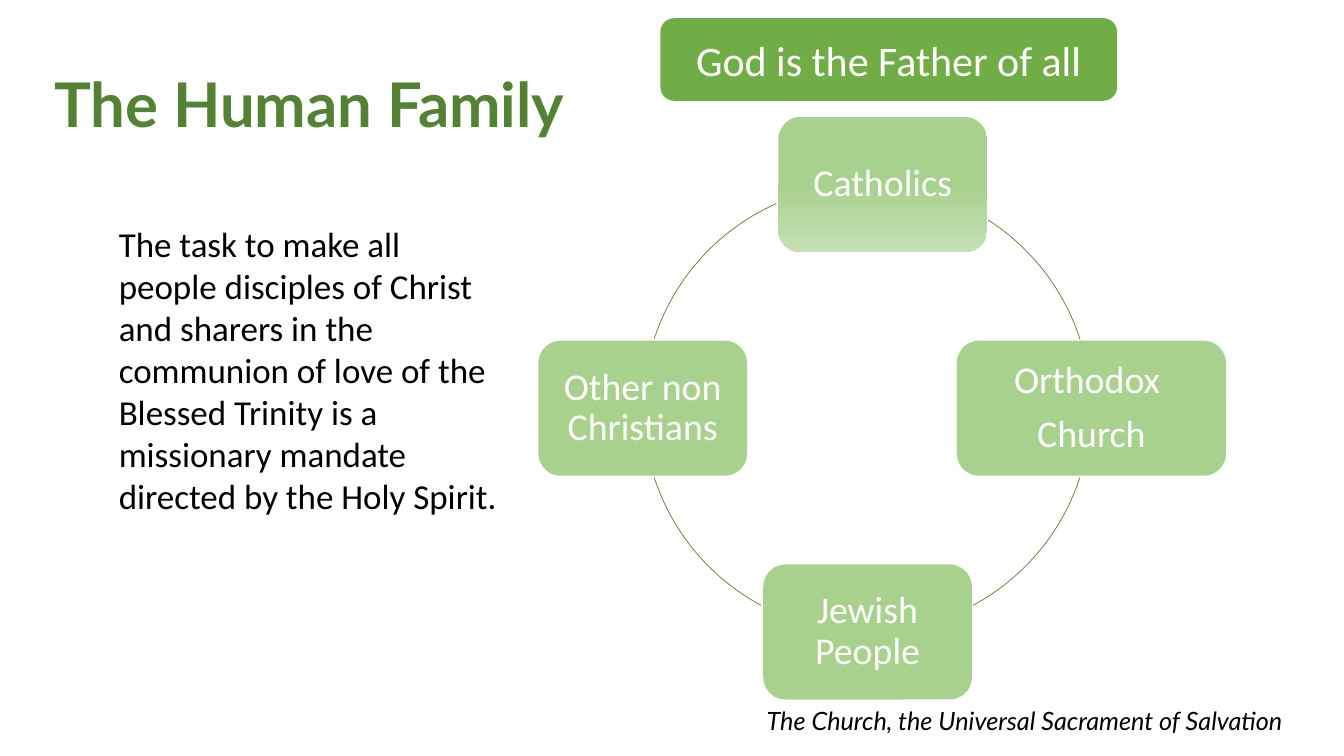
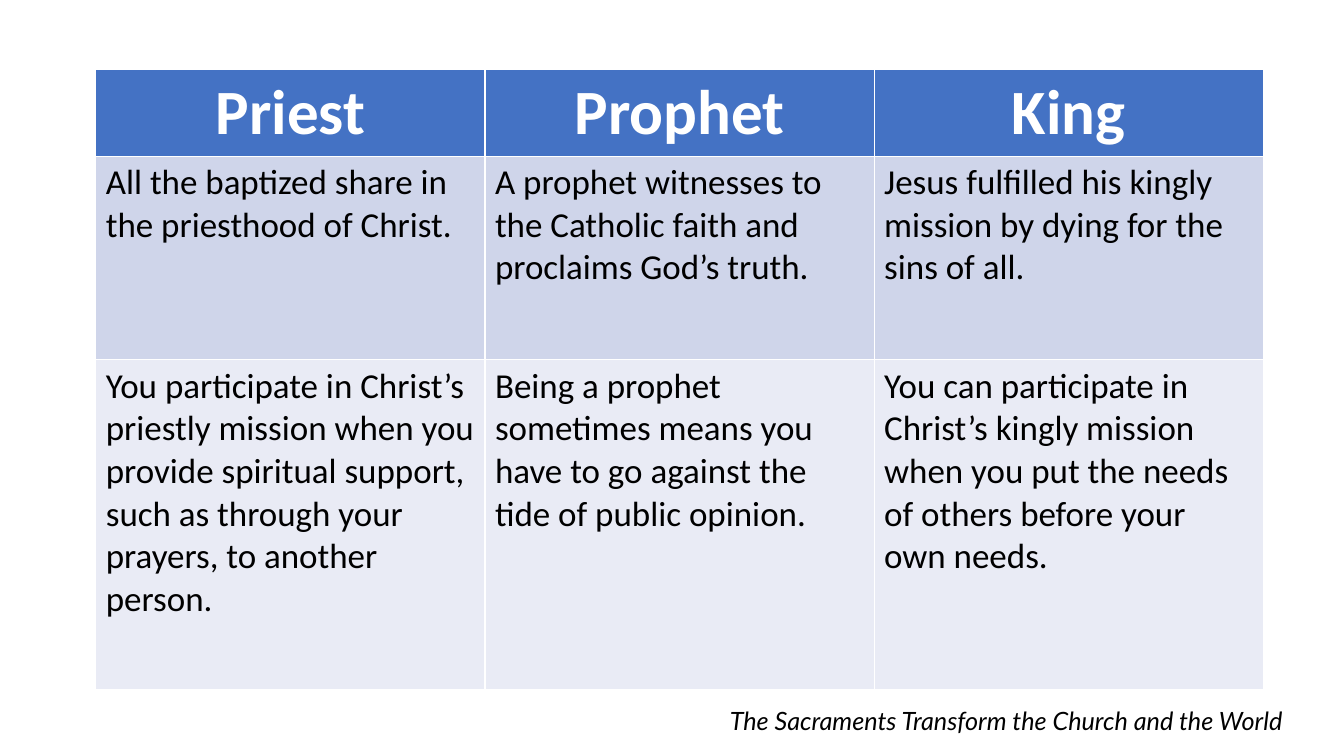
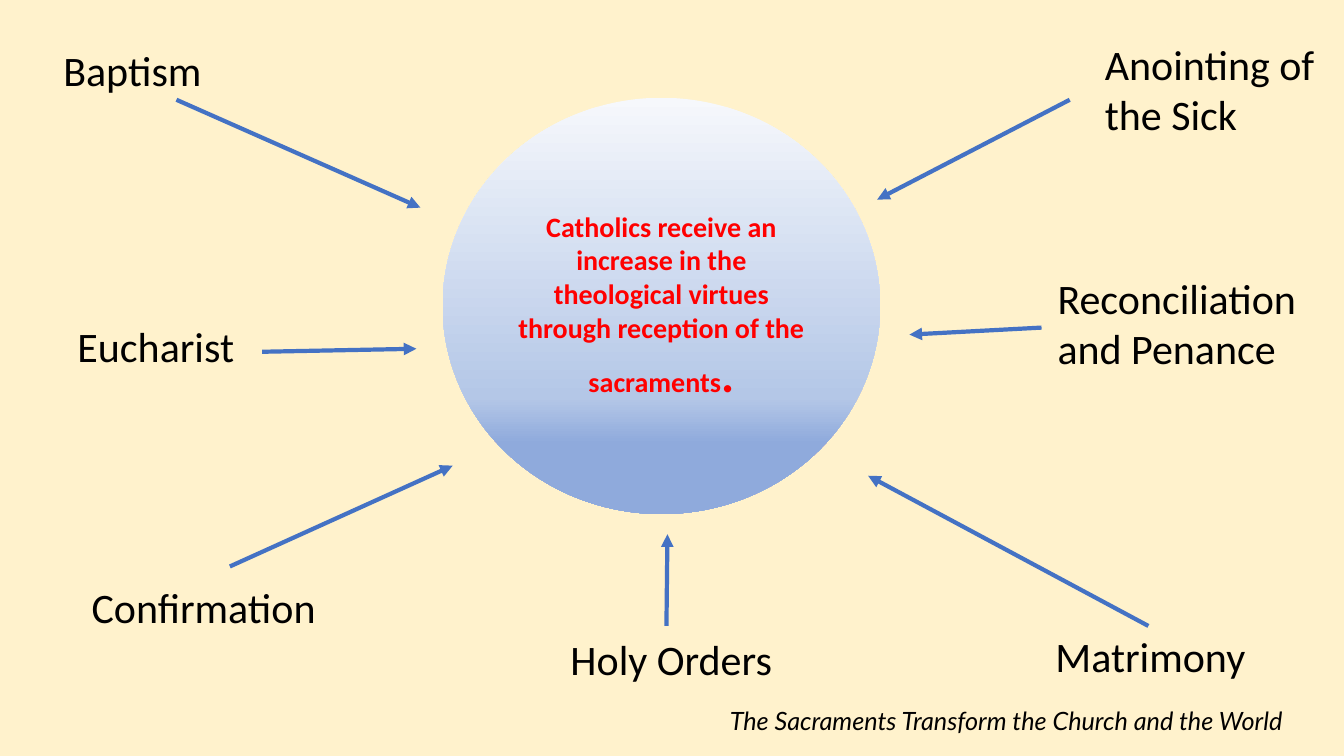
"""Build three slides on the human family, the offices of Christ and the sacraments."""
import lxml.etree
import pptx
import pptx.dml.color
import pptx.enum.shapes
import pptx.enum.text
import pptx.oxml.ns
import pptx.util

RGB = pptx.dml.color.RGBColor
SHAPE = pptx.enum.shapes.MSO_SHAPE
ALIGN = pptx.enum.text.PP_ALIGN
ANCHOR = pptx.enum.text.MSO_ANCHOR
Pt = pptx.util.Pt
qn = pptx.oxml.ns.qn

WHITE = RGB(0xFF, 0xFF, 0xFF)
BLACK = RGB(0, 0, 0)
RED = RGB(0xFF, 0, 0)
CREAM = RGB(0xFF, 0xF2, 0xCC)
GREEN = RGB(0x70, 0xAD, 0x47)
DARK_GREEN = RGB(0x54, 0x82, 0x35)
LIGHT_GREEN = RGB(0xA9, 0xD1, 0x8E)
PALE_GREEN = RGB(0xC5, 0xE0, 0xB4)
BLUE = RGB(0x44, 0x72, 0xC4)
MID_BLUE = RGB(0x8F, 0xAA, 0xDC)
LIGHT_BLUE = RGB(0xB4, 0xC7, 0xE7)
PALE_BLUE = RGB(0xF6, 0xF8, 0xFC)
BAND_DARK = RGB(0xCF, 0xD5, 0xEA)
BAND_LIGHT = RGB(0xE9, 0xEB, 0xF5)

PX_PER_INCH = 100
TITLE = "The Human Family"
TASK = ("The task to make all people disciples of Christ and sharers in the communion of love "
        "of the Blessed Trinity is a missionary mandate directed by the Holy Spirit.")
BANNER = "God is the Father of all"
CHURCH_FOOTER = "The Church, the Universal Sacrament of Salvation"
SACRAMENTS_FOOTER = "The Sacraments Transform the Church and the World"

NODE_W, NODE_H = 207, 134
NODES = [
    ("Catholics", 772, 116, NODE_W),
    ("Orthodox \nChurch", 949, 338, 267),
    ("Jewish People", 757, 560, NODE_W),
    ("Other non Christians", 534, 338, NODE_W),
]
CATHOLIC_STOPS = [(0, LIGHT_GREEN), (50, LIGHT_GREEN), (100, PALE_GREEN)]
RING = (638, 183, 444, 444)
ARC_DEGREES = [(302.7, 342.1), (18.1, 61.8), (118.2, 161.9), (198.1, 246.1)]

OFFICES = [
    ["Priest", "Prophet", "King"],
    ["All the baptized share in the priesthood of Christ.",
     "A prophet witnesses to the Catholic faith and proclaims God’s truth.",
     "Jesus fulfilled his kingly mission by dying for the sins of all."],
    ["You participate in Christ’s priestly mission when you provide spiritual support, "
     "such as through your prayers, to another person.",
     "Being a prophet sometimes means you have to go against the tide of public opinion.",
     "You can participate in Christ’s kingly mission when you put the needs of others "
     "before your own needs."],
]
ROW_HEIGHTS = [86, 202, 327]
ROW_FILLS = [BLUE, BAND_DARK, BAND_LIGHT]

VIRTUES = "Catholics receive an increase in the theological virtues through reception of the sacraments"
SUN_STOPS = [(0, PALE_BLUE), (72, LIGHT_BLUE), (83, MID_BLUE), (100, MID_BLUE)]
SACRAMENTS = [
    ("Baptism", (53, 39, 350, 60), (175, 99, 417, 206)),
    ("Eucharist", (67, 313, 350, 60), (260, 349, 413, 346)),
    ("Confirmation", (81, 572, 350, 60), (228, 562, 449, 462)),
    ("Holy Orders", (556, 624, 393, 60), (661, 621, 662, 530)),
    ("Anointing of the Sick", (1086, 33, 245, 110), (1061, 99, 870, 198)),
    ("Reconciliation and Penance", (1039, 265, 282, 110), (1033, 325, 902, 332)),
    ("Matrimony", (1037, 621, 280, 60), (1139, 621, 861, 472)),
]


def px(*lengths):
    """Turn px lengths into EMU."""
    return [pptx.util.Emu(n * 914400 // PX_PER_INCH) for n in lengths]


def format_text(tf, size, color, font="Calibri", align=ALIGN.LEFT, bold=False, italic=False):
    """Format every run of a text frame."""
    for p in tf.paragraphs:
        p.alignment = align
        for r in p.runs:
            r.font.name, r.font.size = font, Pt(size)
            r.font.bold, r.font.italic = bold, italic
            r.font.color.rgb = color


def add_text(s, text, box, size, **style):
    """Add a wrapped black text box that grows with its text."""
    tf = s.shapes.add_textbox(*px(*box)).text_frame
    tf.word_wrap = True
    tf.auto_size = pptx.enum.text.MSO_AUTO_SIZE.SHAPE_TO_FIT_TEXT
    tf.text = text
    format_text(tf, size, BLACK, **style)


def add_footer(s, text):
    """Add the italic source line at the bottom right."""
    add_text(s, text, (595, 695, 687, 45), 18, font="Lato", align=ALIGN.RIGHT, italic=True)


def add_filled(s, kind, box, color=None, stops=None):
    """Add an unlined shape with a solid fill or a downward gradient."""
    sp = s.shapes.add_shape(kind, *px(*box))
    sp.shadow.inherit = False
    sp.line.fill.background()
    sp.text_frame.vertical_anchor = ANCHOR.MIDDLE
    sp.text_frame.word_wrap = True
    if not stops:
        sp.fill.solid()
        sp.fill.fore_color.rgb = color
        return sp
    sp.fill.gradient()
    sp.fill.gradient_angle = 270
    stop_list = sp._element.spPr.find(".//" + qn("a:gsLst"))
    for old in list(stop_list):
        stop_list.remove(old)
    for percent, stop_color in stops:
        gs = lxml.etree.SubElement(stop_list, qn("a:gs"), pos=str(percent * 1000))
        lxml.etree.SubElement(gs, qn("a:srgbClr"), val=str(stop_color))
    return sp


def add_arrow(s, ends):
    """Add a blue arrow pointing at its second end."""
    line = s.shapes.add_connector(pptx.enum.shapes.MSO_CONNECTOR.STRAIGHT, *px(*ends))
    line.line.color.rgb = BLUE
    line.line.width = Pt(3)
    lxml.etree.SubElement(line.line._get_or_add_ln(), qn("a:tailEnd"), type="triangle")
    lxml.etree.SubElement(line._element.spPr, qn("a:effectLst"))


def build_family(prs):
    """Build the ring of peoples."""
    s = prs.slides.add_slide(prs.slide_layouts[5])
    title = s.shapes.title
    title.left, title.top, title.width, title.height = px(20, 34, 574, 145)
    tf = title.text_frame
    tf.text = TITLE
    tf.vertical_anchor = ANCHOR.MIDDLE
    tf.paragraphs[0].line_spacing = 0.9
    format_text(tf, 44, DARK_GREEN, font="Lato", align=ALIGN.CENTER, bold=True)

    for degrees in ARC_DEGREES:
        arc = s.shapes.add_shape(SHAPE.ARC, *px(*RING))
        arc.shadow.inherit = False
        arc.fill.background()
        arc.line.color.rgb = DARK_GREEN
        arc.line.width = Pt(0.5)
        for i, angle in enumerate(degrees):
            arc.adjustments[i] = angle * 0.6

    for i, (name, x, y, w) in enumerate(NODES):
        stops = CATHOLIC_STOPS if i == 0 else None
        tf = add_filled(s, SHAPE.ROUNDED_RECTANGLE, (x, y, w, NODE_H), LIGHT_GREEN, stops).text_frame
        tf.margin_left = tf.margin_right = tf.margin_top = tf.margin_bottom = px(17)[0]
        tf.text = name
        format_text(tf, 27, WHITE, align=ALIGN.CENTER)
        for p in tf.paragraphs:
            p.line_spacing = 0.9
            p.space_after = Pt(9.45)

    tf = add_filled(s, SHAPE.ROUNDED_RECTANGLE, (655, 18, 453, 82), GREEN).text_frame
    tf.text = BANNER
    format_text(tf, 30, WHITE, align=ALIGN.CENTER)
    add_text(s, TASK, (108, 216, 403, 347), 25)
    add_footer(s, CHURCH_FOOTER)


def build_offices(prs):
    """Build the table of three offices."""
    s = prs.slides.add_slide(prs.slide_layouts[6])
    box = px(95, 69, 1158, sum(ROW_HEIGHTS))
    table = s.shapes.add_table(len(OFFICES), len(OFFICES[0]), *box).table
    for i, texts in enumerate(OFFICES):
        table.rows[i].height = px(ROW_HEIGHTS[i])[0]
        for j, text in enumerate(texts):
            cell = table.cell(i, j)
            cell.fill.solid()
            cell.fill.fore_color.rgb = ROW_FILLS[i]
            cell.text_frame.text = text
            if i == 0:
                format_text(cell.text_frame, 45, WHITE, align=ALIGN.CENTER, bold=True)
            else:
                format_text(cell.text_frame, 25, BLACK)
    add_footer(s, SACRAMENTS_FOOTER)


def build_sacraments(prs):
    """Build the sacraments pointing at the virtues."""
    s = prs.slides.add_slide(prs.slide_layouts[6])
    s.background.fill.solid()
    s.background.fill.fore_color.rgb = CREAM
    tf = add_filled(s, SHAPE.OVAL, (439, 97, 434, 413), stops=SUN_STOPS).text_frame
    tf.text = VIRTUES
    full_stop = tf.paragraphs[0].add_run()
    full_stop.text = "."
    format_text(tf, 20, RED, align=ALIGN.CENTER, bold=True)
    full_stop.font.size = Pt(35)
    for name, box, arrow in SACRAMENTS:
        add_text(s, name, box, 30)
        add_arrow(s, arrow)
    add_footer(s, SACRAMENTS_FOOTER)


def main():
    """Build and save the presentation."""
    prs = pptx.Presentation()
    prs.slide_width, prs.slide_height = px(1333, 750)
    build_family(prs)
    build_offices(prs)
    build_sacraments(prs)
    prs.save("out.pptx")


if __name__ == "__main__":
    main()
